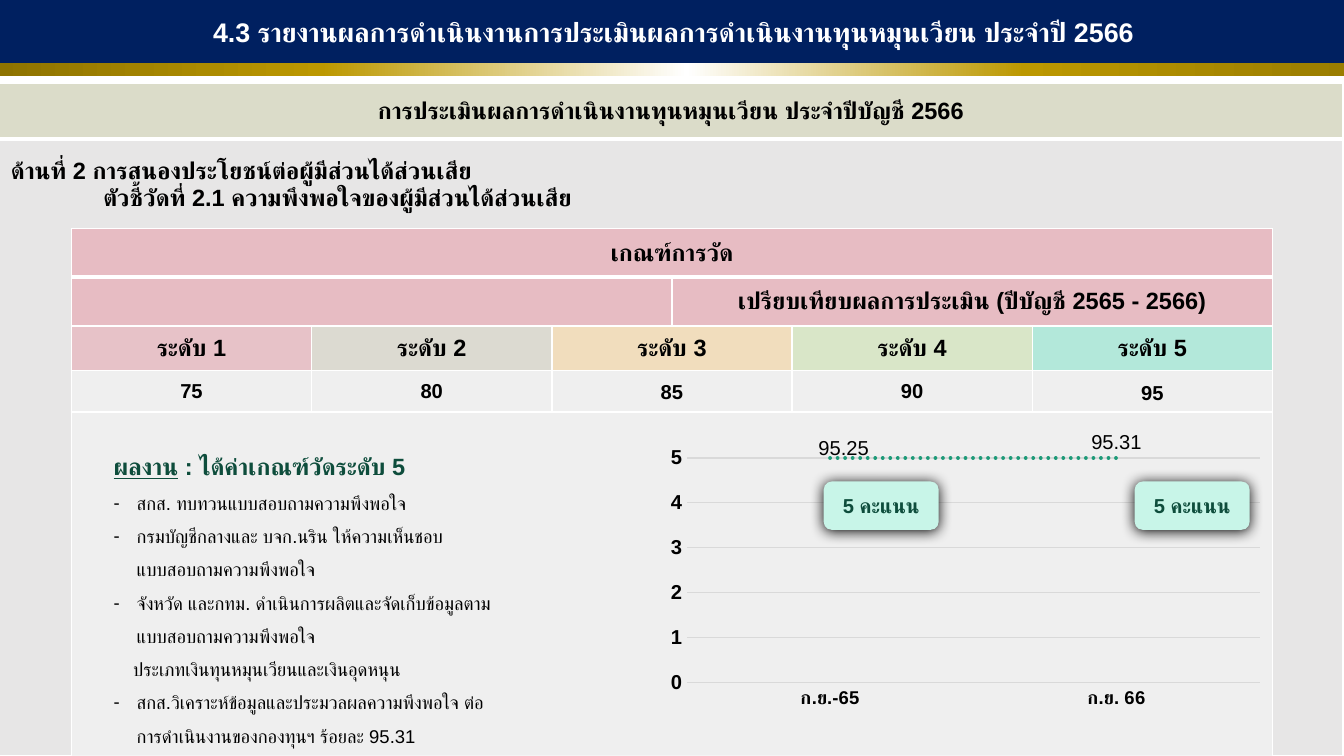
from lxml import etree
from pptx import Presentation
from pptx.chart.data import CategoryChartData
from pptx.dml.color import RGBColor
from pptx.enum.chart import XL_CHART_TYPE, XL_LABEL_POSITION, XL_MARKER_STYLE, XL_TICK_MARK
from pptx.enum.dml import MSO_LINE
from pptx.enum.shapes import MSO_SHAPE
from pptx.enum.text import MSO_ANCHOR, MSO_AUTO_SIZE, PP_ALIGN
from pptx.oxml import parse_xml
from pptx.oxml.ns import nsdecls, qn
from pptx.util import Pt

LINE, ABOVE = XL_CHART_TYPE.LINE, XL_LABEL_POSITION.ABOVE
NO_MARKER, NO_TICK, DOTS = XL_MARKER_STYLE.NONE, XL_TICK_MARK.NONE, MSO_LINE.ROUND_DOT
RECT, ROUNDED = MSO_SHAPE.RECTANGLE, MSO_SHAPE.ROUNDED_RECTANGLE
TOP, MIDDLE, NO_FIT = MSO_ANCHOR.TOP, MSO_ANCHOR.MIDDLE, MSO_AUTO_SIZE.NONE
LEFT, CENTER = PP_ALIGN.LEFT, PP_ALIGN.CENTER

COLORS = {
    "navy": "002060", "white": "FFFFFF", "black": "000000", "sage": "DBDCC9",
    "panel": "E7E6E6", "pink": "E8ABB5", "stone": "D6D2C4", "peach": "F9D8A3",
    "lime": "D1E6B5", "aqua": "91EAD2", "pale": "F2F2F2", "mint": "C8F5E8",
    "forest": "0E4D3C", "teal": "1D9A78", "grid": "D9D9D9",
}
GOLD_STOPS = [(0, "8E7300"), (24, "BC9800"), (51, "FFFFFF"), (76, "BC9800"), (100, "9A7D00")]


def rgb(name):
    return RGBColor.from_string(COLORS[name])


def set_font(font, size, color="black", **fmt):
    values = {"name": "Arial", "bold": True, "size": Pt(size), **fmt}
    for key, value in values.items():
        setattr(font, key, value)
    font.color.rgb = rgb(color)


class Deck:
    """Holds the presentation, its current slide and the shared style."""

    def __init__(self, width, height):
        self.prs = Presentation()
        self.prs.slide_width, self.prs.slide_height = Pt(width), Pt(height)
        self.s = self.prs.slides.add_slide(self.prs.slide_layouts[1])

    def add_text(self, p, text, size, color="black", **fmt):
        r = p.add_run()
        r.text = text
        set_font(r.font, size, color, **fmt)
        # Thai script takes its typeface from the complex-script slot
        etree.SubElement(r.font._element, qn("a:cs"), typeface="Arial")

    def layout_paragraph(self, p, align=LEFT, spacing=1.0, after=0, left=0, hang=0, bullet=None):
        pPr = p._p.get_or_add_pPr()
        pPr.set("marL", str(Pt(left)))
        pPr.set("indent", str(-Pt(hang)))
        if bullet:
            etree.SubElement(pPr, qn("a:buFont"), typeface="Arial")
            etree.SubElement(pPr, qn("a:buChar"), char=bullet)
        else:
            etree.SubElement(pPr, qn("a:buNone"))
        values = {"alignment": align, "line_spacing": spacing,
                  "space_before": Pt(0), "space_after": Pt(after)}
        for key, value in values.items():
            setattr(p, key, value)

    def placeholder(self, idx, box, anchor):
        """Moves a template placeholder to the front and returns it."""
        sp = self.s.placeholders[idx]
        sp.left, sp.top, sp.width, sp.height = map(Pt, box)
        self.s.shapes.element.append(sp._element)
        tf = sp.text_frame
        tf.word_wrap, tf.auto_size, tf.vertical_anchor = True, NO_FIT, anchor
        return sp

    def title(self, box, text):
        sp = self.placeholder(0, box, MIDDLE)
        sp.fill.solid()
        sp.fill.fore_color.rgb = rgb("navy")
        p = sp.text_frame.paragraphs[0]
        self.layout_paragraph(p, CENTER)
        self.add_text(p, text, 16, "white")

    def results(self, box, heading, items):
        tf = self.placeholder(1, box, TOP).text_frame
        p = tf.paragraphs[0]
        self.layout_paragraph(p)
        self.add_text(p, heading[0], 14, "forest", underline=True)
        self.add_text(p, heading[1], 14, "forest")
        for text, fmt in items:
            p = tf.add_paragraph()
            self.layout_paragraph(p, spacing=1.5, **fmt)
            self.add_text(p, text, 11, bold=False)

    def shape(self, kind, box):
        sp = self.s.shapes.add_shape(kind, *map(Pt, box))
        sp.shadow.inherit = False
        sp.line.fill.background()
        return sp

    def gold_bar(self, box):
        sp = self.shape(RECT, box)
        sp.fill.gradient()
        sp.fill.gradient_angle = 0
        stops = sp._element.spPr.find(".//" + qn("a:gsLst"))
        for stop in list(stops):
            stops.remove(stop)
        for pos, color in GOLD_STOPS:
            stop = etree.SubElement(stops, qn("a:gs"), pos=str(pos * 1000))
            etree.SubElement(stop, qn("a:srgbClr"), val=color)

    def badge(self, box, text):
        sp = self.shape(ROUNDED, box)
        sp.fill.solid()
        sp.fill.fore_color.rgb = rgb("mint")
        effects = sp._element.spPr.find(qn("a:effectLst"))
        shadow = etree.SubElement(effects, qn("a:outerShdw"), blurRad=str(Pt(8.5)),
                                  dist=str(Pt(1)), dir="5400000", algn="t", rotWithShape="0")
        etree.SubElement(shadow, qn("a:srgbClr"), val=COLORS["black"])
        tf = sp.text_frame
        tf.word_wrap, tf.vertical_anchor = True, MIDDLE
        p = tf.paragraphs[0]
        p.alignment = CENTER
        self.add_text(p, text, 12, "forest")

    def table(self, box, cols, rows):
        frame = self.s.shapes.add_table(len(rows), len(cols), *map(Pt, box))
        table = frame.table
        table.first_row = table.horz_banding = False
        for col, width in zip(table.columns, cols):
            col.width = Pt(width)
        for row, height in zip(table.rows, rows):
            row.height = Pt(height)
        return table

    def cell(self, table, row, col, span, fill, alpha=100, text="", size=14, spacing=1.0):
        """Fills a cell that spans some columns; the first row has a thick lower edge."""
        for c in range(col, col + span):
            tcPr = table.cell(row, c)._tc.get_or_add_tcPr()
            for side in "LRTB":
                thick = (row, side) in ((0, "B"), (1, "T"))
                ln = etree.SubElement(tcPr, qn(f"a:ln{side}"), w=str(Pt(3 if thick else 1)))
                paint = etree.SubElement(ln, qn("a:solidFill"))
                etree.SubElement(paint, qn("a:srgbClr"), val=COLORS["white"])
            table.cell(row, c).fill.solid()
            table.cell(row, c).fill.fore_color.rgb = rgb(fill)
            color = tcPr.find(qn("a:solidFill")).find(qn("a:srgbClr"))
            etree.SubElement(color, qn("a:alpha"), val=str(alpha * 1000))
        cell = table.cell(row, col)
        if span > 1:
            cell.merge(table.cell(row, col + span - 1))
        if text:
            cell.vertical_anchor = MIDDLE
            p = cell.text_frame.paragraphs[0]
            self.layout_paragraph(p, CENTER, spacing)
            self.add_text(p, text, size)
        return cell

    def score_chart(self, box, months, scores, labels):
        """labels holds the text and the shift (as parts of the chart) of each point."""
        data = CategoryChartData()
        data.categories = months
        data.add_series("Series 1", scores)
        chart = self.s.shapes.add_chart(LINE, *map(Pt, box), data).chart
        chart.has_legend = chart.has_title = False
        set_font(chart.font, 12, "navy")
        cat, val = chart.category_axis, chart.value_axis
        for axis, size in ((cat, 11), (val, 12)):
            axis.major_tick_mark = axis.minor_tick_mark = NO_TICK
            set_font(axis.tick_labels.font, size)
        val.minimum_scale, val.maximum_scale, val.major_unit = 0, 5, 1
        val.format.line.fill.background()
        for line in (cat.format.line, val.major_gridlines.format.line):
            line.color.rgb, line.width = rgb("grid"), Pt(0.75)
        chart.plots[0].vary_by_categories = False
        ser = chart.plots[0].series[0]
        ser.smooth, ser.marker.style = False, NO_MARKER
        line = ser.format.line
        line.color.rgb, line.width, line.dash_style = rgb("teal"), Pt(2.25), DOTS
        ser._element.find(".//" + qn("a:ln")).set("cap", "rnd")
        for i, (text, shift) in enumerate(labels):
            label = ser.points[i].data_label
            self.add_text(label.text_frame.paragraphs[0], text, 12, bold=False)
            label.position = ABOVE
            dLbl = ser._element.findall(".//" + qn("c:dLbl"))[i]
            dLbl.insert(1, self.manual_layout(x=shift[0], y=shift[1]))
        area = chart._chartSpace.find(".//" + qn("c:plotArea"))
        for old in area.findall(qn("c:layout")):
            area.remove(old)
        area.insert(0, self.manual_layout(layoutTarget="inner", xMode="edge", yMode="edge",
                                          x=0.14, y=0.09, w=0.84, h=0.77))

    def manual_layout(self, **values):
        layout = parse_xml(f"<c:layout {nsdecls('c')}><c:manualLayout/></c:layout>")
        for key, value in values.items():
            etree.SubElement(layout[0], qn(f"c:{key}"), val=str(value))
        return layout


def main():
    d = Deck(800, 450)
    panel = d.table((-0.7, 49.7, 800, 400.3), [800], [33.1, 367.2])
    d.cell(panel, 0, 0, 1, "sage", text="การประเมินผลการดำเนินงานทุนหมุนเวียน ประจำปีบัญชี 2566")
    tf = d.cell(panel, 1, 0, 1, "panel").text_frame
    topics = [("ด้านที่ 2 การสนองประโยชน์ต่อผู้มีส่วนได้ส่วนเสีย", 1.5, 0),
              ("ตัวชี้วัดที่ 2.1 ความพึงพอใจของผู้มีส่วนได้ส่วนเสีย", 1.0, 55)]
    for i, (text, spacing, left) in enumerate(topics):
        p = tf.add_paragraph() if i else tf.paragraphs[0]
        d.layout_paragraph(p, spacing=spacing, after=0.5, left=left)
        d.add_text(p, text, 14)

    criteria = d.table((42.5, 136.1, 715, 314), [143, 143, 71.5, 71.5, 143, 143],
                       [28.8, 28.8, 26.6, 24.5, 205.3])
    d.cell(criteria, 0, 0, 6, "pink", 70, "เกณฑ์การวัด")
    d.cell(criteria, 1, 0, 3, "pink", 70)
    d.cell(criteria, 1, 3, 3, "pink", 70, "เปรียบเทียบผลการประเมิน (ปีบัญชี 2565 - 2566)")
    levels = [(0, 1, "pink", 1.0), (1, 1, "stone", 1.0), (2, 2, "peach", 1.07),
              (4, 1, "lime", 1.0), (5, 1, "aqua", 1.2)]
    for i, (col, span, fill, spacing) in enumerate(levels):
        d.cell(criteria, 2, col, span, fill, 60, f"ระดับ {i + 1}")
        d.cell(criteria, 3, col, span, "pale", 80, str(75 + 5 * i), 12, spacing)
    d.cell(criteria, 4, 0, 6, "pale", 80)

    d.gold_bar((-0.7, 0, 803, 45.4))
    d.title((-0.7, 0, 803, 37.4),
            "4.3 รายงานผลการดำเนินงานการประเมินผลการดำเนินงานทุนหมุนเวียน ประจำปี 2566")
    dash = {"left": 13.7, "hang": 13.7, "bullet": "-"}
    d.results((60.5, 265.7, 249, 184.3), ("ผลงาน", " : ได้ค่าเกณฑ์วัดระดับ 5"), [
        ("สกส. ทบทวนแบบสอบถามความพึงพอใจ", dash),
        ("กรมบัญชีกลางและ บจก.นริน ให้ความเห็นชอบแบบสอบถามความพึงพอใจ", dash),
        ("จังหวัด และกทม. ดำเนินการผลิตและจัดเก็บข้อมูลตามแบบสอบถามความพึงพอใจ", dash),
        ("ประเภทเงินทุนหมุนเวียนและเงินอุดหนุน", {"left": 11.5}),
        ("สกส.วิเคราะห์ข้อมูลและประมวลผลความพึงพอใจ ต่อการดำเนินงานของกองทุนฯ ร้อยละ 95.31", dash),
    ])
    d.score_chart((352, 257, 406, 173.5), ["ก.ย.-65", "ก.ย. 66"], [5, 5],
                  [("95.25", (0.02, 0.02)), ("95.31", (0, 0))])
    for left in (675.4, 490.3):
        d.badge((left, 286.6, 68.4, 28.8), "5 คะแนน")
    d.prs.save("out.pptx")


if __name__ == "__main__":
    main()
